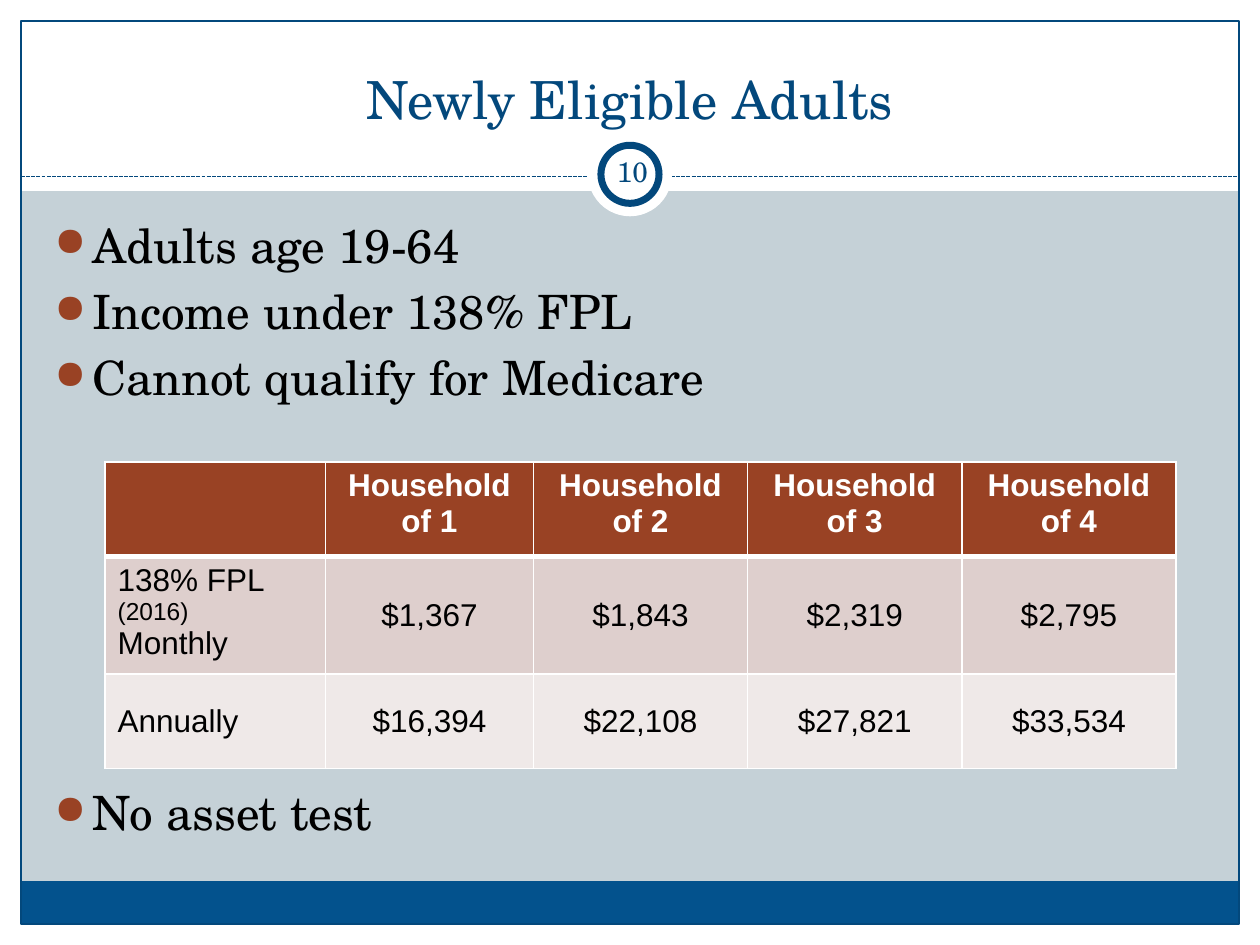
from lxml import etree
from pptx import Presentation
from pptx.dml.color import RGBColor
from pptx.enum import dml, shapes, text
from pptx.oxml import ns
from pptx.util import Pt

NAVY = RGBColor(0x03, 0x48, 0x7C)
BLUE = RGBColor(0x03, 0x52, 0x8D)
RUST = RGBColor(0x99, 0x42, 0x24)
GREY = RGBColor(0xC5, 0xD1, 0xD7)
ROSE = RGBColor(0xDE, 0xCF, 0xCD)
PALE = RGBColor(0xEF, 0xE9, 0xE8)
WHITE = RGBColor(0xFF, 0xFF, 0xFF)
BLACK = RGBColor(0, 0, 0)
SERIF, SANS = "TeX Gyre Schola", "Arial"
WIDTH, HEIGHT = 720, 540

BULLETS = ["Adults age 19-64", "Income under 138% FPL",
           "Cannot qualify for Medicare", "No asset test"]
HOUSEHOLDS = [f"Household of {size}" for size in range(1, 5)]
MONTHLY = ["$1,367", "$1,843", "$2,319", "$2,795"]
ANNUALLY = ["$16,394", "$22,108", "$27,821", "$33,534"]


def apply_format(target, values):
    for name, value in values.items():
        setattr(target, name, value)


def add_run(paragraph, words, color, **values):
    run = paragraph.add_run()
    run.text = words
    apply_format(run.font, values)
    run.font.color.rgb = color


def add_panel(slide, box, fill=None, line=None, line_width=0.75,
              kind=shapes.MSO_SHAPE.RECTANGLE):
    shape = slide.shapes.add_shape(kind, *map(Pt, box))
    shape.shadow.inherit = False
    if fill is None:
        shape.fill.background()
    else:
        shape.fill.solid()
        shape.fill.fore_color.rgb = fill
    if line is None:
        shape.line.fill.background()
    else:
        shape.line.color.rgb = line
        shape.line.width = Pt(line_width)


def add_text_frame(slide, box, **values):
    frame = slide.shapes.add_textbox(*map(Pt, box)).text_frame
    apply_format(frame, {"word_wrap": True, **values})
    return frame


def add_frame(slide, box):
    """White margins, header band, footer bar, outline and dashed rule."""
    left, top, width, height = box
    margin, header, footer = 12, 109.2, 24.5
    right, bottom = left + width, top + height
    for panel in [(left, bottom - margin, width, margin),
                  (left, top, width, header),
                  (left, top, margin, height),
                  (right - margin, top, margin, height)]:
        add_panel(slide, panel, WHITE)
    inner = width - 2 * margin
    add_panel(slide, (left + margin, bottom - margin - footer, inner, footer), BLUE)
    add_panel(slide, (left + margin, top + margin, inner, height - 2 * margin),
              line=NAVY)

    rule_y = Pt(top + 100.8)
    rule = slide.shapes.add_connector(shapes.MSO_CONNECTOR.STRAIGHT,
                                      Pt(left + margin), rule_y,
                                      Pt(right - margin), rule_y)
    rule.line.color.rgb = NAVY
    rule.line.width = Pt(0.75)
    rule.line.dash_style = dml.MSO_LINE.SQUARE_DOT
    etree.SubElement(rule._element.spPr, ns.qn("a:effectLst"))


def add_number_badge(slide, box, number):
    """Ring on a white disc, with the slide number inside."""
    left, top, size, _ = box
    inset = 7.4
    ring = size - 2 * inset
    oval = shapes.MSO_SHAPE.OVAL
    add_panel(slide, box, WHITE, kind=oval)
    add_panel(slide, (left + inset, top + inset, ring, ring), WHITE, NAVY, 4, oval)
    margins = {f"margin_{side}": Pt(3.6)
               for side in ("left", "top", "right", "bottom")}
    frame = add_text_frame(slide, (left + inset, top + 5, 36, 34.6),
                           vertical_anchor=text.MSO_ANCHOR.MIDDLE, **margins)
    paragraph = frame.paragraphs[0]
    paragraph.alignment = text.PP_ALIGN.CENTER
    add_run(paragraph, number, NAVY, size=Pt(16), name=SERIF)


def add_title(slide, box, words):
    frame = add_text_frame(slide, box, vertical_anchor=text.MSO_ANCHOR.BOTTOM)
    paragraph = frame.paragraphs[0]
    paragraph.alignment = text.PP_ALIGN.CENTER
    add_run(paragraph, words, NAVY, size=Pt(30), name=SERIF)


def add_bullets(slide, box, items, table_gap):
    """Bulleted list; the last item stands below the table."""
    frame = add_text_frame(slide, box)
    for index, words in enumerate(items):
        paragraph = frame.add_paragraph() if index else frame.paragraphs[0]
        last = index == len(items) - 1
        paragraph.space_before = Pt(table_gap if last else 5.4)
        add_run(paragraph, words, BLACK, size=Pt(27), name=SERIF)
        properties = paragraph._p.get_or_add_pPr()
        properties.set("marL", str(Pt(21.6)))
        properties.set("indent", str(-Pt(21.6)))
        color = etree.SubElement(properties, ns.qn("a:buClr"))
        etree.SubElement(color, ns.qn("a:srgbClr"), val=str(RUST))
        etree.SubElement(properties, ns.qn("a:buSzPct"), val="85000")
        etree.SubElement(properties, ns.qn("a:buChar"), char="●")


def set_borders(cell, bottom_width):
    properties = cell._tc.get_or_add_tcPr()
    for position, side in enumerate("LRTB"):
        width = bottom_width if side == "B" else 1
        line = etree.Element(ns.qn(f"a:ln{side}"), w=str(Pt(width)))
        fill = etree.SubElement(line, ns.qn("a:solidFill"))
        etree.SubElement(fill, ns.qn("a:srgbClr"), val=str(WHITE))
        properties.insert(position, line)


def add_income_table(slide, box):
    rows = [("", HOUSEHOLDS, RUST), (None, MONTHLY, ROSE),
            ("Annually", ANNUALLY, PALE)]
    widths = [126, 118.8, 122.4, 122.4, 122.4]
    table = slide.shapes.add_table(len(rows), len(widths), *map(Pt, box)).table
    apply_format(table, {"first_row": False, "horz_banding": False})
    for column, width in zip(table.columns, widths):
        column.width = Pt(width)

    for row_index, (label, values, fill) in enumerate(rows):
        header = row_index == 0
        table.rows[row_index].height = Pt(54)
        for column_index, words in enumerate([label, *values]):
            cell = table.cell(row_index, column_index)
            cell.fill.solid()
            cell.fill.fore_color.rgb = fill
            set_borders(cell, 3 if header else 1)
            paragraph = cell.text_frame.paragraphs[0]
            if column_index:
                paragraph.alignment = text.PP_ALIGN.CENTER
            if not header and words:
                cell.vertical_anchor = text.MSO_ANCHOR.MIDDLE
            if words:
                add_run(paragraph, words, WHITE if header else BLACK,
                        size=Pt(18), name=SANS, bold=header)

    # Monthly label mixes two text sizes
    frame = table.cell(1, 0).text_frame
    first, second = frame.paragraphs[0], frame.add_paragraph()
    for paragraph, words, size in [(first, "138% FPL ", 18), (first, "(2016)", 14),
                                   (second, "Monthly", 18)]:
        add_run(paragraph, words, BLACK, size=Pt(size), name=SANS, bold=False)


def main():
    presentation = Presentation()
    apply_format(presentation, {"slide_width": Pt(WIDTH), "slide_height": Pt(HEIGHT)})
    slide = presentation.slides.add_slide(presentation.slide_layouts[6])
    slide.background.fill.solid()
    slide.background.fill.fore_color.rgb = GREY

    add_frame(slide, (0, 0, WIDTH, HEIGHT))
    add_number_badge(slide, (336, 75.6, 48, 48), "10")
    add_title(slide, (24, 18, 672, 60), "Newly Eligible Adults")
    add_bullets(slide, (24, 120, 670, 360), BULLETS, table_gap=216)
    add_income_table(slide, (60, 264, 612, 162))
    presentation.save("out.pptx")


if __name__ == "__main__":
    main()
